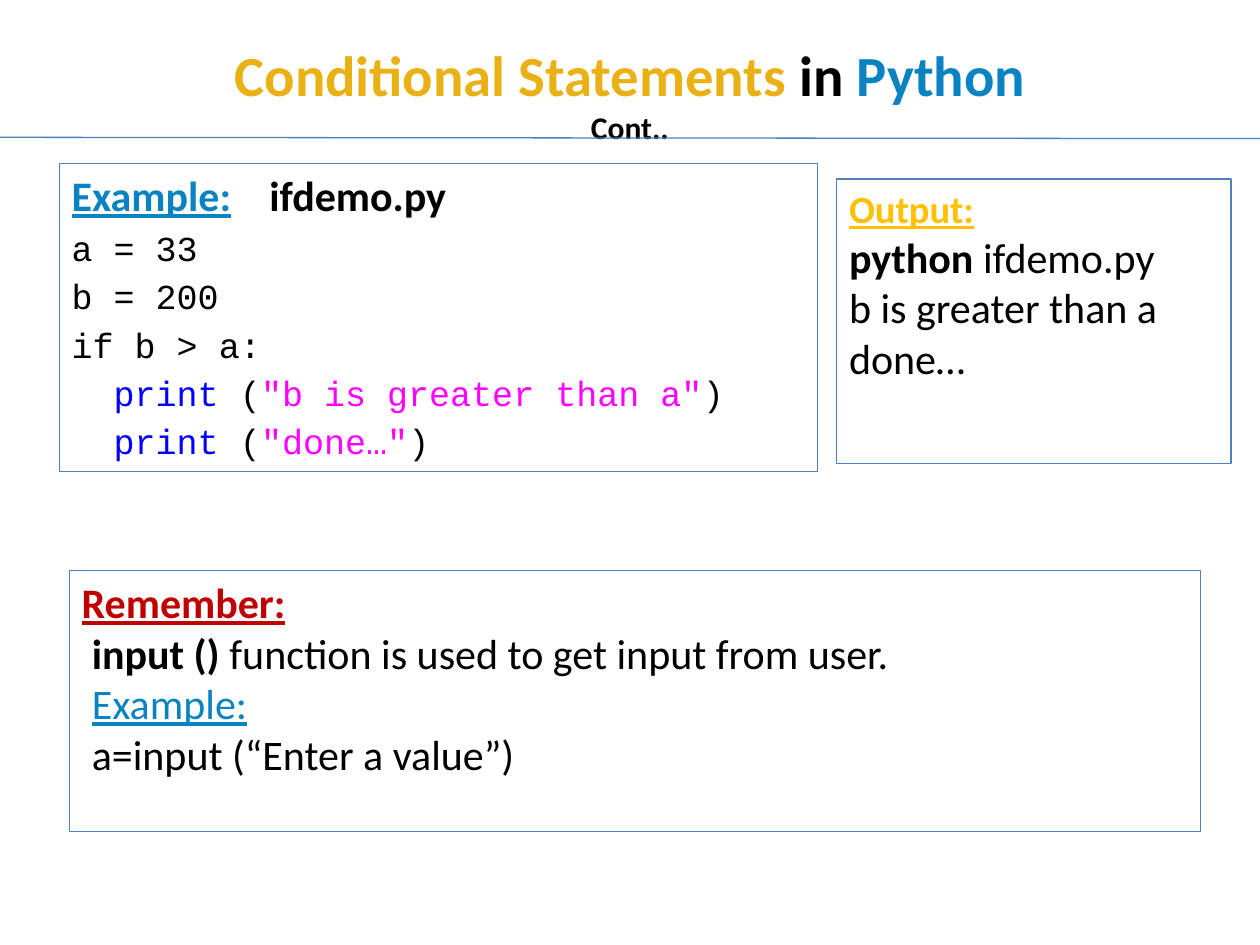
from lxml import etree
from pptx import Presentation
from pptx.dml.color import RGBColor
from pptx.enum.shapes import MSO_CONNECTOR, MSO_SHAPE
from pptx.enum.text import MSO_ANCHOR, PP_ALIGN
from pptx.oxml.ns import qn
from pptx.util import Inches, Pt

RECTANGLE = MSO_SHAPE.RECTANGLE
STRAIGHT = MSO_CONNECTOR.STRAIGHT
TOP, MIDDLE = MSO_ANCHOR.TOP, MSO_ANCHOR.MIDDLE
LEFT, CENTER = PP_ALIGN.LEFT, PP_ALIGN.CENTER

COLORS = {
    "black": "000000", "gold": "E9B115", "blue": "0A83C0", "red": "C00000",
    "amber": "FFC000", "keyword": "0000FF", "string": "FF00FF",
    "border": "4F81BD", "rule": "4B7EBC",
}


def add_paragraph(frame, runs, size=24, font="Calibri", align=LEFT,
                  line_spacing=None, indent=0, tab=None):
    """Append a paragraph; each run is (text, color name, style letters b and u)."""
    first = not frame.paragraphs[0].runs
    paragraph = frame.paragraphs[0] if first else frame.add_paragraph()
    properties = paragraph._p.get_or_add_pPr()
    properties.set("marL", str(Inches(indent)))
    if tab:
        stops = etree.SubElement(properties, qn("a:tabLst"))
        etree.SubElement(stops, qn("a:tab"), pos=str(Inches(tab)), algn="l")
    paragraph.alignment = align
    if line_spacing:
        paragraph.line_spacing = line_spacing
    for text, color, style in runs:
        run = paragraph.add_run()
        run.text = text
        run.font.name = font
        run.font.size = Pt(size)
        run.font.bold = "b" in style
        run.font.underline = "u" in style
        run.font.color.rgb = RGBColor.from_string(COLORS[color])


def add_panel(left, top, width, height):
    """Add an outlined box and return its text frame."""
    shape = slide.shapes.add_shape(
        RECTANGLE, Inches(left), Inches(top), Inches(width), Inches(height))
    shape.shadow.inherit = False
    shape.fill.background()
    shape.line.color.rgb = RGBColor.from_string(COLORS["border"])
    shape.line.width = Pt(0.75)
    shape.text_frame.word_wrap = True
    shape.text_frame.vertical_anchor = TOP
    return shape.text_frame


presentation = Presentation()
presentation.slide_width = Inches(10)
presentation.slide_height = Inches(7.5)
slide = presentation.slides.add_slide(presentation.slide_layouts[6])

# Title
title = slide.shapes.add_textbox(
    Inches(0.5), Inches(0.3), Inches(9), Inches(0.87)).text_frame
title.word_wrap = True
title.vertical_anchor = MIDDLE
add_paragraph(title, [("Conditional Statements ", "gold", "b"),
                      ("in ", "black", "b"), ("Python", "blue", "b")],
              size=32.4, align=CENTER)
add_paragraph(title, [("Cont..", "black", "b")], size=18, align=CENTER)

# Rule under the title
rule = slide.shapes.add_connector(
    STRAIGHT, Inches(0), Inches(1.09), Inches(10), Inches(1.1))
rule.line.color.rgb = RGBColor.from_string(COLORS["rule"])
rule.line.width = Pt(0.75)
etree.SubElement(rule._element.spPr, qn("a:effectLst"))

# Example code
example = add_panel(0.47, 1.3, 6.02, 2.44)
add_paragraph(example, [("Example:", "blue", "bu"), ("\t", "blue", "b"),
                        ("ifdemo.py", "black", "b")], tab=1.57)
code_lines = [[(text, "black", "")] for text in ("a = 33", "b = 200", "if b > a:")]
for message in ('"b is greater than a"', '"done…"'):
    code_lines.append([("  print ", "keyword", ""), ("(", "black", ""),
                       (message, "string", ""), (")", "black", "")])
for runs in code_lines:
    add_paragraph(example, runs, size=20, font="Courier New", line_spacing=1.15)

# Reminder
reminder = add_panel(0.55, 4.53, 8.98, 2.07)
add_paragraph(reminder, [("Remember:", "red", "bu")])
for runs in (
    [("input () ", "black", "b"),
     ("function is used to get input from user.", "black", "")],
    [("Example:", "blue", "u")],
    [("a=input (“Enter a value”)", "black", "")],
):
    add_paragraph(reminder, runs, indent=0.08)

# Output
output = add_panel(6.64, 1.42, 3.13, 2.26)
add_paragraph(output, [("Output:", "amber", "bu")], size=22)
add_paragraph(output, [("python", "black", "b"), (" ifdemo.py", "black", "")])
for text in ("b is greater than a", "done…"):
    add_paragraph(output, [(text, "black", "")])

presentation.save("out.pptx")
